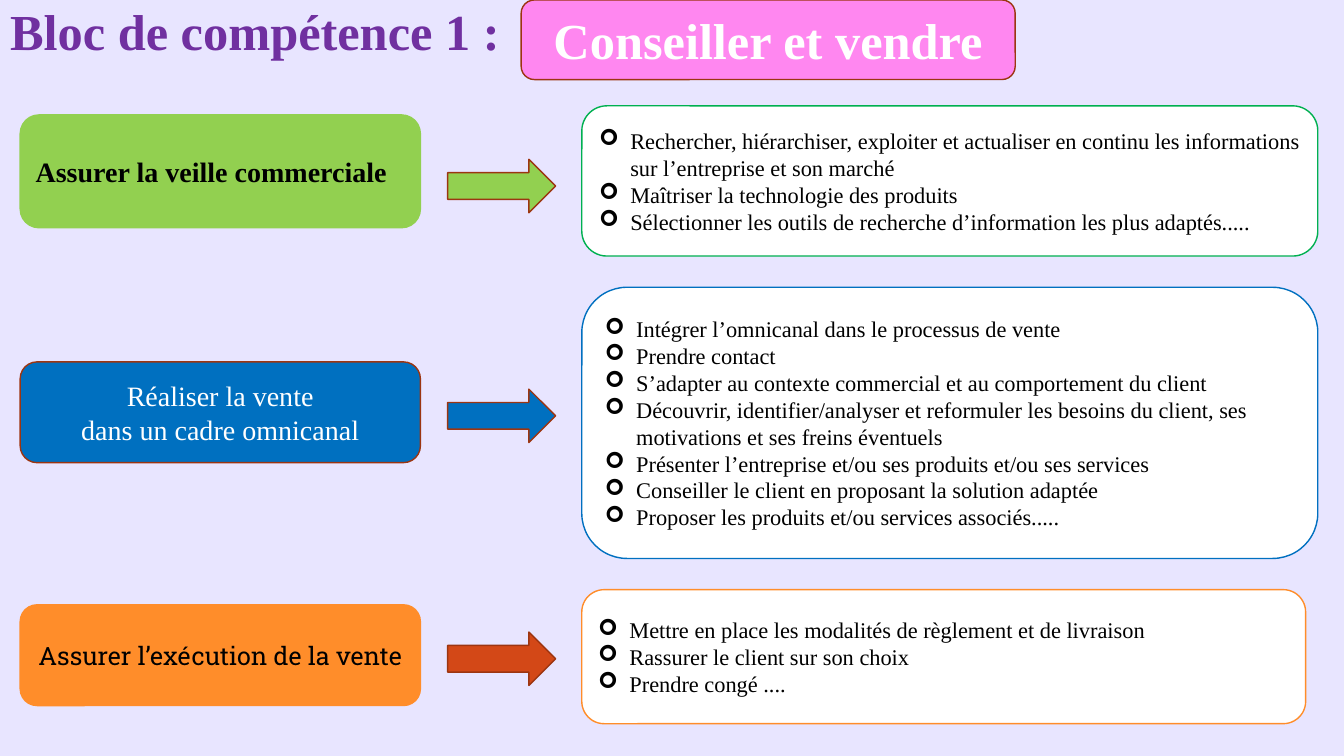
from dataclasses import dataclass

from lxml.etree import SubElement
from pptx import Presentation
from pptx.dml.color import RGBColor
from pptx.enum.shapes import MSO_SHAPE
from pptx.enum.text import MSO_ANCHOR, PP_ALIGN
from pptx.oxml.ns import qn
from pptx.util import Inches, Pt

SLIDE_WIDTH, SLIDE_HEIGHT = Inches(13.33), Inches(7.5)


@dataclass(frozen=True)
class Theme:
    background: str = "E8E5FF"
    purple: str = "7030A0"
    pink: str = "FF87F0"
    lime: str = "92D050"
    green: str = "00B050"
    blue: str = "0070C0"
    orange: str = "FF8D2A"
    rust: str = "D34817"
    outline: str = "9C3511"
    white: str = "FFFFFF"
    black: str = "000000"
    serif: str = "Times New Roman"
    slab: str = "Roboto Slab"
    heading: int = 36
    task: int = 20
    small_task: int = 18
    detail: int = 16


THEME = Theme()

# Columns (left, width) in percent of the slide's width
TASK_COLUMN = (1.5, 29.78)
ARROW_COLUMN = (33.31, 8.03)
DETAIL_COLUMN = (43.29, 54.76)
SHORT_DETAIL_COLUMN = (43.29, 53.86)
BLOCK_COLUMN = (38.78, 36.76)

# Rows (top, height) in percent of the slide's height
HEADER_ROW = (0, 10.53)
TITLE_ROW = (0, 17.47)
ARROW_HEIGHT = 7.07


def area(column, row):
    """Turn a column and a row into left, top, width and height."""
    (left, width), (top, height) = column, row
    return [int(share * side / 100) for share, side in (
        (left, SLIDE_WIDTH), (top, SLIDE_HEIGHT),
        (width, SLIDE_WIDTH), (height, SLIDE_HEIGHT))]


def style_font(paragraph, size, color, face=THEME.serif, bold=False):
    font = paragraph.font
    font.size, font.name, font.bold = Pt(size), face, bold
    font.color.rgb = RGBColor.from_string(color)


def add_figure(slide, preset, column, row, fill, line):
    figure = slide.shapes.add_shape(preset, *area(column, row))
    figure.shadow.inherit = False
    figure.fill.solid()
    figure.fill.fore_color.rgb = RGBColor.from_string(fill)
    figure.line.color.rgb = RGBColor.from_string(line)
    figure.line.width = Pt(1)
    return figure


def add_card(slide, column, row, fill, line, lines, size, color,
             align=PP_ALIGN.CENTER, bullet=None, **font):
    card = add_figure(slide, MSO_SHAPE.ROUNDED_RECTANGLE, column, row, fill, line)
    frame = card.text_frame
    frame.word_wrap = True
    frame.vertical_anchor = MSO_ANCHOR.MIDDLE
    frame.text = "\n".join(lines)
    for paragraph in frame.paragraphs:
        paragraph.alignment = align
        if bullet:
            add_bullet(paragraph, bullet)
        style_font(paragraph, size, color, **font)


def add_bullet(paragraph, character):
    properties = paragraph._p.get_or_add_pPr()
    properties.set("marL", str(Inches(0.31)))
    properties.set("indent", str(-Inches(0.31)))
    SubElement(properties, qn("a:buFont"), typeface="Wingdings")
    SubElement(properties, qn("a:buChar"), char=character)


def add_details(slide, column, row, line, items):
    add_card(slide, column, row, THEME.white, line, items, THEME.detail,
             THEME.black, align=PP_ALIGN.LEFT, bullet="➢")


def add_arrow(slide, top, fill):
    add_figure(slide, MSO_SHAPE.RIGHT_ARROW, ARROW_COLUMN, (top, ARROW_HEIGHT),
               fill, THEME.outline)


def add_title(slide, text):
    title = slide.shapes.title
    title.left, title.top, title.width, title.height = area((0, 100), TITLE_ROW)
    frame = title.text_frame
    frame.text = text
    frame.word_wrap = True
    frame.vertical_anchor = MSO_ANCHOR.TOP
    frame.margin_left, frame.margin_right = Inches(0.1), Inches(0.08)
    frame.margin_top = frame.margin_bottom = 0
    heading = frame.paragraphs[0]
    heading.alignment = PP_ALIGN.LEFT
    style_font(heading, THEME.heading, THEME.purple, bold=True)


def main():
    presentation = Presentation()
    presentation.slide_width, presentation.slide_height = SLIDE_WIDTH, SLIDE_HEIGHT
    slide = presentation.slides.add_slide(presentation.slide_layouts[5])
    slide.background.fill.solid()
    slide.background.fill.fore_color.rgb = RGBColor.from_string(THEME.background)

    # Header
    add_title(slide, "Bloc de compétence 1 :")
    add_card(slide, BLOCK_COLUMN, HEADER_ROW, THEME.pink, THEME.outline,
             ["Conseiller et vendre"], THEME.heading, THEME.white, bold=True)

    # Market watch
    add_card(slide, TASK_COLUMN, (15.2, 14.93), THEME.lime, THEME.lime,
             ["Assurer la veille commerciale"], THEME.task, THEME.black,
             align=PP_ALIGN.LEFT, bold=True)
    add_arrow(slide, 21.07, THEME.lime)
    add_details(slide, DETAIL_COLUMN, (14, 19.87), THEME.green, [
        "Rechercher, hiérarchiser, exploiter et actualiser en continu "
        "les informations sur l’entreprise et son marché",
        "Maîtriser la technologie des produits",
        "Sélectionner les outils de recherche d’information les plus adaptés.....",
    ])

    # Sale
    add_card(slide, TASK_COLUMN, (47.87, 13.33), THEME.blue, THEME.outline,
             ["Réaliser la vente", "dans un cadre omnicanal"],
             THEME.task, THEME.white)
    add_arrow(slide, 51.47, THEME.blue)
    add_details(slide, DETAIL_COLUMN, (38, 35.87), THEME.blue, [
        "Intégrer l’omnicanal dans le processus de vente",
        "Prendre contact",
        "S’adapter au contexte commercial et au comportement du client",
        "Découvrir, identifier/analyser et reformuler les besoins du client, "
        "ses motivations et ses freins éventuels",
        "Présenter l’entreprise et/ou ses produits et/ou ses services",
        "Conseiller le client en proposant la solution adaptée",
        "Proposer les produits et/ou services associés.....",
    ])

    # Completion of the sale
    add_card(slide, TASK_COLUMN, (80, 13.33), THEME.orange, THEME.orange,
             ["Assurer l’exécution de la vente"], THEME.small_task, THEME.black,
             face=THEME.slab)
    add_arrow(slide, 83.6, THEME.rust)
    add_details(slide, SHORT_DETAIL_COLUMN, (78, 17.73), THEME.orange, [
        "Mettre en place les modalités de règlement et de livraison",
        "Rassurer le client sur son choix",
        "Prendre congé ....",
    ])

    presentation.save("out.pptx")


if __name__ == "__main__":
    main()
